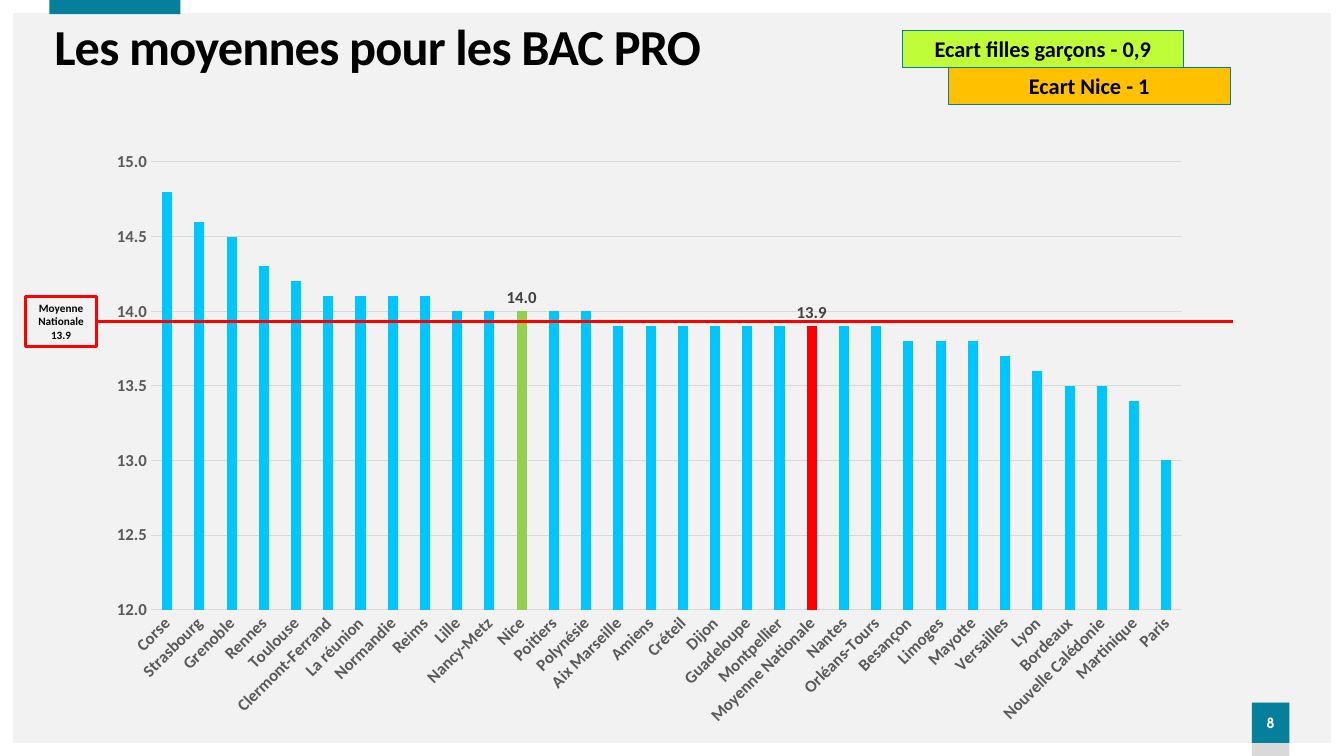
import pptx
import pptx.chart.data
import pptx.dml.color
import pptx.enum.chart
import pptx.enum.shapes
import pptx.enum.text
import pptx.oxml
import pptx.oxml.ns
import pptx.util
from dataclasses import dataclass

Align = pptx.enum.text.PP_ALIGN
Anchor = pptx.enum.text.MSO_ANCHOR
Shape = pptx.enum.shapes.MSO_SHAPE


@dataclass(frozen=True)
class Theme:
    font: str = "Calibri"
    number_font: str = "TeX Gyre Adventor"
    paper: str = "F2F2F2"
    white: str = "FFFFFF"
    black: str = "000000"
    teal: str = "067F9C"
    gray: str = "D9D9D9"
    axis_text: str = "595959"
    label_text: str = "404040"
    lime: str = "C0FD39"
    amber: str = "FFC000"
    bar: str = "01C6FD"
    nice: str = "92D050"
    red: str = "FF0000"
    title_size: int = 36
    gap_size: int = 16
    axis_size: int = 12
    number_size: int = 10
    note_size: int = 8


theme = Theme()
rgb = pptx.dml.color.RGBColor.from_string

deck = pptx.Presentation()
deck.slide_width = pptx.util.Inches(13.33)
deck.slide_height = pptx.util.Inches(7.5)
page = deck.slides.add_slide(deck.slide_layouts[6])
page.background.fill.solid()
page.background.fill.fore_color.rgb = rgb(theme.paper)

# The page is a grid of 100 columns by 100 rows
column, row = deck.slide_width / 100, deck.slide_height / 100


def grid(left, top, width, height):
    return int(left * column), int(top * row), int(width * column), int(height * row)


def add_box(place, fill=None, line=None, weight=0.5, lines=(), size=theme.gap_size,
            color=theme.black, font=theme.font, kind=Shape.RECTANGLE):
    box = page.shapes.add_shape(kind, *grid(*place))
    box.shadow.inherit = False
    if fill:
        box.fill.solid()
        box.fill.fore_color.rgb = rgb(fill)
    else:
        box.fill.background()
    if line:
        box.line.color.rgb = rgb(line)
        box.line.width = pptx.util.Pt(weight)
    else:
        box.line.fill.background()
    frame = box.text_frame
    frame.vertical_anchor = Anchor.TOP
    for index, words in enumerate(lines):
        para = frame.add_paragraph() if index else frame.paragraphs[0]
        para.text = words
        para.alignment = Align.CENTER
        para.font.name, para.font.size, para.font.bold = font, pptx.util.Pt(size), True
        para.font.color.rgb = rgb(color)
    return box


# Page frame, top tab and page number
border = add_box((0, 0, 100, 100), theme.white, kind=Shape.FRAME)
border.adjustments[0] = 0.017
add_box((3.68, 0, 9.75, 1.87), theme.teal)
add_box((93.15, 92.93, 2.78, 7.07), theme.gray)
number = add_box((93.15, 92.93, 2.78, 5.33), theme.teal, lines=["8"],
                 size=theme.number_size, color=theme.white, font=theme.number_font)
number.text_frame.margin_left = number.text_frame.margin_right = 0
number.text_frame.vertical_anchor = Anchor.MIDDLE

# Title
title = page.shapes.add_textbox(*grid(3.3, 2.13, 91.65, 8.67))
title.text_frame.word_wrap = True
title.text_frame.vertical_anchor = Anchor.MIDDLE
para = title.text_frame.paragraphs[0]
para.line_spacing = 0.9
span = para.add_run()
span.text = "Les moyennes pour les BAC PRO"
span.font.name, span.font.size, span.font.bold = theme.font, pptx.util.Pt(theme.title_size), True
span.font.color.rgb = rgb(theme.black)
span.font._element.set("spc", "-60")

# Gap boxes, stepping down to the right
gaps = [("Ecart filles garçons - 0,9", theme.lime), ("Ecart Nice - 1", theme.amber)]
for step, (words, fill) in enumerate(gaps):
    add_box((67.13 + 3.45 * step, 4 + 4.93 * step, 20.93, 4.93), fill, theme.teal, lines=[words])

# Chart: academies grouped by average, highest first
academies = {
    14.8: ["Corse"],
    14.6: ["Strasbourg"],
    14.5: ["Grenoble"],
    14.3: ["Rennes"],
    14.2: ["Toulouse"],
    14.1: ["Clermont-Ferrand", "La réunion", "Normandie", "Reims"],
    14.0: ["Lille", "Nancy-Metz", "Nice", "Poitiers", "Polynésie"],
    13.9: ["Aix Marseille", "Amiens", "Créteil", "Dijon", "Guadeloupe", "Montpellier",
           "Moyenne Nationale", "Nantes", "Orléans-Tours"],
    13.8: ["Besançon", "Limoges", "Mayotte"],
    13.7: ["Versailles"],
    13.6: ["Lyon"],
    13.5: ["Bordeaux", "Nouvelle Calédonie"],
    13.4: ["Martinique"],
    13.0: ["Paris"],
}
names = [name for group in academies.values() for name in group]
data = pptx.chart.data.CategoryChartData(number_format="0.0")
data.categories = names
data.add_series("Series 1", [mean for mean, group in academies.items() for name in group])
chart = page.shapes.add_chart(pptx.enum.chart.XL_CHART_TYPE.COLUMN_CLUSTERED,
                              *grid(7.05, 18.53, 82.58, 79.07), data).chart
chart.has_legend = chart.has_title = False
chart.font.name, chart.font.size = theme.number_font, pptx.util.Pt(theme.number_size)
chart.font.color.rgb = rgb(theme.black)

# Axes
means, places = chart.value_axis, chart.category_axis
means.minimum_scale, means.maximum_scale, means.major_unit = 12, 15, 0.5
means.tick_labels.number_format = "0.0"
means.tick_labels.number_format_is_linked = False
means.format.line.fill.background()
for axis in (means, places):
    axis.major_tick_mark = axis.minor_tick_mark = pptx.enum.chart.XL_TICK_MARK.NONE
    font = axis.tick_labels.font
    font.name, font.size, font.bold = theme.font, pptx.util.Pt(theme.axis_size), True
    font.color.rgb = rgb(theme.axis_text)
for rule in (means.major_gridlines.format.line, places.format.line):
    rule.color.rgb = rgb(theme.gray)
    rule.width = pptx.util.Pt(0.75)
places._element.find(".//" + pptx.oxml.ns.qn("a:bodyPr")).set("rot", "-2700000")

# Columns, with two of them marked and labelled
plot = chart.plots[0]
plot.vary_by_categories = False
plot.gap_width, plot.overlap = 219, -27
series = plot.series[0]
series.invert_if_negative = False
series.format.fill.solid()
series.format.fill.fore_color.rgb = rgb(theme.bar)
series.data_labels.show_value = False
for name, color in (("Nice", theme.nice), ("Moyenne Nationale", theme.red)):
    point = series.points[names.index(name)]
    point.format.fill.solid()
    point.format.fill.fore_color.rgb = rgb(color)
    font = point.data_label.font
    font.name, font.size, font.bold = theme.font, pptx.util.Pt(theme.axis_size), True
    font.color.rgb = rgb(theme.label_text)
    point.data_label.position = pptx.enum.chart.XL_LABEL_POSITION.OUTSIDE_END

# National average: box and line
note = add_box((1.88, 39.2, 5.33, 6.67), line=theme.red, weight=2.25,
               lines=["Moyenne Nationale", "13.9"], size=theme.note_size)
middle = note.top + note.height // 2
average = page.shapes.add_connector(pptx.enum.shapes.MSO_CONNECTOR.STRAIGHT,
                                    note.left + note.width, middle, int(91.73 * column), middle)
average.begin_connect(note, 3)
average.line.color.rgb = rgb(theme.red)
average.line.width = pptx.util.Pt(2.25)
average._element.spPr.append(pptx.oxml.parse_xml(
    '<a:effectLst xmlns:a="http://schemas.openxmlformats.org/drawingml/2006/main"/>'))

deck.save("out.pptx")
